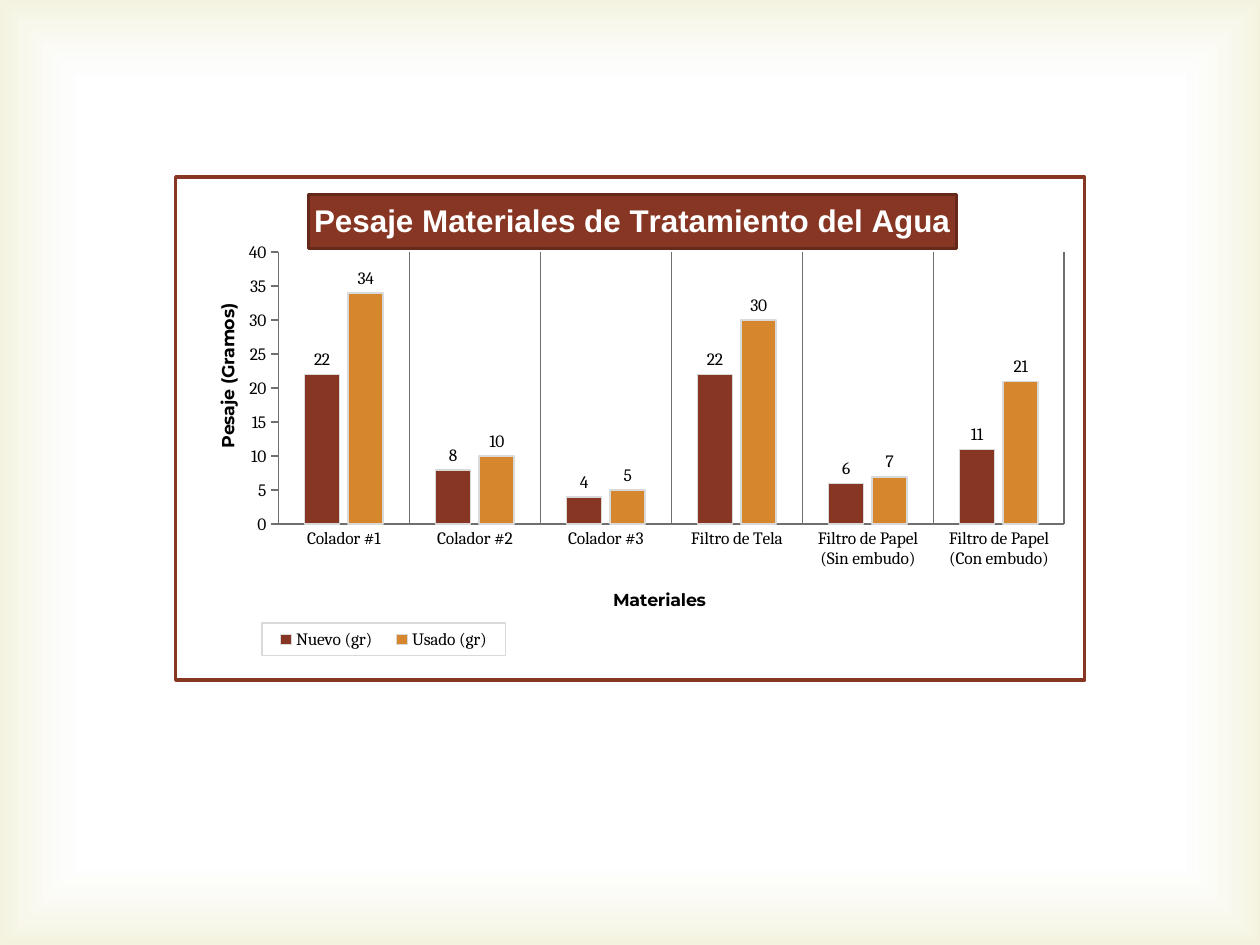
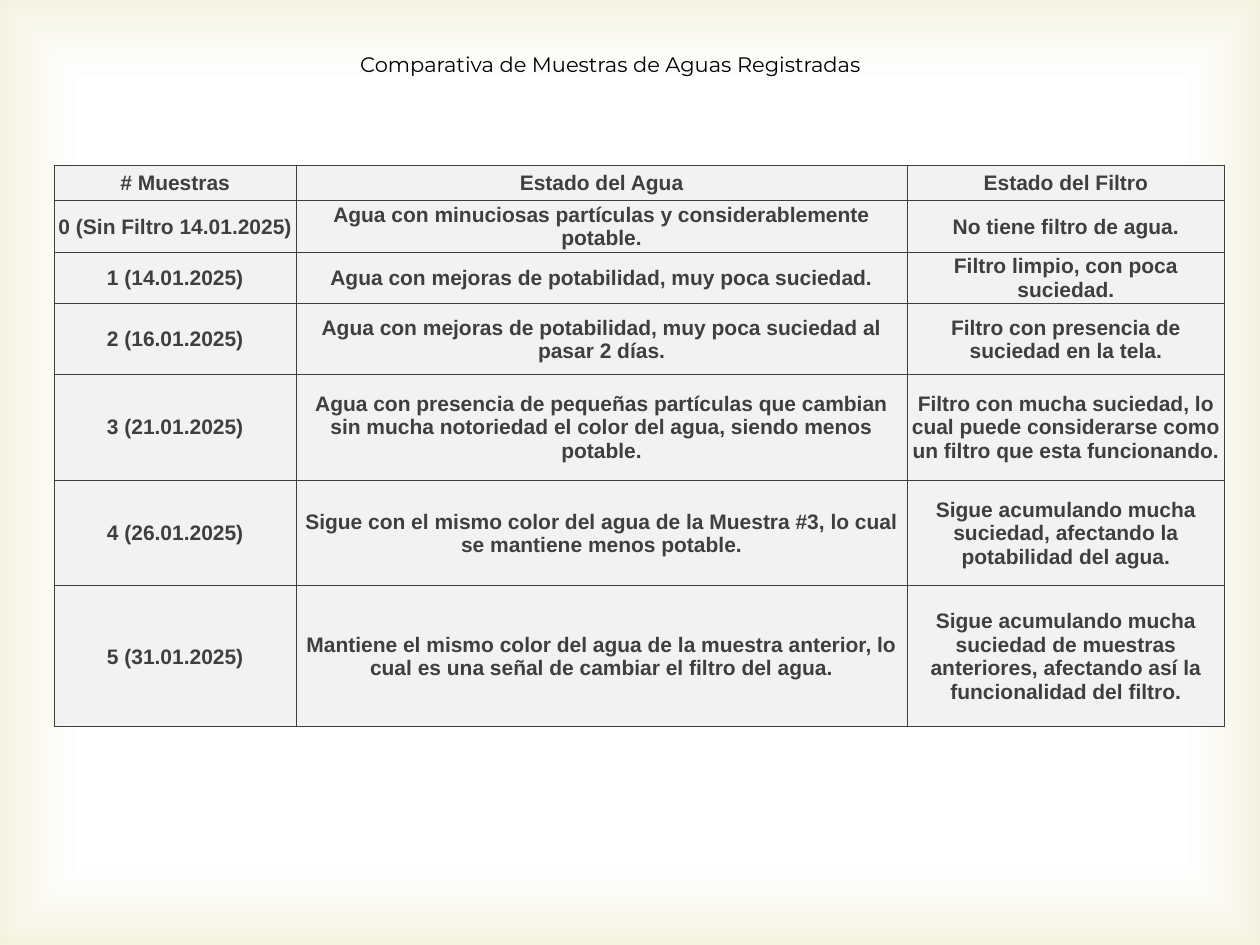
from lxml import etree
from pptx import Presentation
from pptx.chart import data as cd
from pptx.dml.color import RGBColor
from pptx.enum import chart as ch, shapes, text
from pptx.oxml import parse_xml
from pptx.oxml.ns import nsdecls, qn
from pptx.util import Pt

# Content
CHART_TITLE = "Pesaje Materiales de Tratamiento del Agua"
CATEGORY_TITLE = "Materiales"
VALUE_TITLE = "Pesaje (Gramos)"
MATERIALS = ["Colador #1", "Colador #2", "Colador #3", "Filtro de Tela",
             "Filtro de Papel (Sin embudo)", "Filtro de Papel (Con embudo)"]
WEIGHTS = {"Nuevo (gr)": (22, 8, 4, 22, 6, 11),
           "Usado (gr)": (34, 10, 5, 30, 7, 21)}

TABLE_TITLE = "Comparativa de Muestras de Aguas Registradas"
SAMPLES = [
    ("# Muestras", "Estado del Agua", "Estado del Filtro"),
    ("0 (Sin Filtro 14.01.2025)",
     "Agua con minuciosas partículas y considerablemente potable.",
     "No tiene filtro de agua."),
    ("1 (14.01.2025)",
     "Agua con mejoras de potabilidad, muy poca suciedad.",
     "Filtro limpio, con poca suciedad."),
    ("2 (16.01.2025)",
     "Agua con mejoras de potabilidad, muy poca suciedad al pasar 2 días.",
     "Filtro con presencia de suciedad en la tela."),
    ("3 (21.01.2025)",
     "Agua con presencia de pequeñas partículas que cambian sin mucha "
     "notoriedad el color del agua, siendo menos potable.",
     "Filtro con mucha suciedad, lo cual puede considerarse como un filtro "
     "que esta funcionando."),
    ("4 (26.01.2025)",
     "Sigue con el mismo color del agua de la Muestra #3, lo cual se "
     "mantiene menos potable.",
     "Sigue acumulando mucha suciedad, afectando la potabilidad del agua."),
    ("5 (31.01.2025)",
     "Mantiene el mismo color del agua de la muestra anterior, lo cual es "
     "una señal de cambiar el filtro del agua.",
     "Sigue acumulando mucha suciedad de muestras anteriores, afectando así "
     "la funcionalidad del filtro."),
]
COLUMN_WIDTHS = (138.2, 349.2, 181.4)
ROW_LINES = (1, 1, 1, 2, 3, 3, 4)
LINE_HEIGHT = 20.16

# Style
WHITE = RGBColor(0xFF, 0xFF, 0xFF)
BLACK = RGBColor(0, 0, 0)
KHAKI = RGBColor(0xD1, 0xCA, 0x75)
BRICK = RGBColor(0x87, 0x36, 0x24)
DARK_BRICK = RGBColor(0x65, 0x28, 0x1B)
ORANGE = RGBColor(0xD6, 0x86, 0x2D)
AXIS_GRAY = RGBColor(0x6F, 0x6F, 0x6F)
PALE_GRAY = RGBColor(0xD9, 0xD9, 0xD9)
CELL_GRAY = RGBColor(0xF2, 0xF2, 0xF2)
INK = RGBColor(0x3F, 0x3F, 0x3F)
HEADING_FONT, CELL_FONT, CHART_FONT = "Montserrat", "Arial", "Cambria"


def set_font(font, name, size, color, bold=False):
    font.name, font.size, font.bold = name, Pt(size), bold
    font.color.rgb = color


def set_line(line, color, width):
    line.color.rgb = color
    line.width = Pt(width)


def line_xml(tag, color, width):
    return (f'<a:{tag} {nsdecls("a")} w="{Pt(width)}"><a:solidFill>'
            f'<a:srgbClr val="{color}"/></a:solidFill></a:{tag}>')


def shape_props(fill, line):
    return parse_xml(
        f'<c:spPr {nsdecls("c", "a")}><a:solidFill><a:srgbClr val="{fill}"/>'
        f'</a:solidFill>{line}</c:spPr>')


def add_master_glow(prs, s):
    """Soft coloured edge, kept on the master so every slide shows it."""
    sp = s.shapes.add_shape(shapes.MSO_SHAPE.RECTANGLE, 0, 0,
                            prs.slide_width, prs.slide_height)
    sp.shadow.inherit = False
    sp.fill.background()
    sp.line.fill.background()
    stops = "".join(
        f'<a:gs pos="{pos}000"><a:srgbClr val="{color}">'
        f'<a:alpha val="{alpha}000"/></a:srgbClr></a:gs>'
        for pos, color, alpha in ((83, WHITE, 11), (100, KHAKI, 23)))
    gradient = parse_xml(
        f'<a:gradFill {nsdecls("a")}><a:gsLst>{stops}</a:gsLst>'
        '<a:path path="rect"><a:fillToRect l="50000" t="50000" r="50000" '
        'b="50000"/></a:path></a:gradFill>')
    props = sp.element.spPr
    props.replace(props.find(qn("a:noFill")), gradient)
    prs.slide_master.shapes.element.insert(2, sp.element)


def place(part, x, y, w=None, h=None, inner=False):
    """Give a chart part a fixed place, as fractions of the chart."""
    layout = part.find(qn("c:layout"))
    if layout is None:
        layout = parse_xml(f'<c:layout {nsdecls("c")}/>')
        part.insert(0, layout)
    manual = etree.SubElement(layout, qn("c:manualLayout"))
    values = [("layoutTarget", "inner")] if inner else []
    values += [("xMode", "edge"), ("yMode", "edge"), ("x", x), ("y", y)]
    values += [("w", w), ("h", h)] if w else []
    for tag, value in values:
        etree.SubElement(manual, qn("c:" + tag)).set("val", str(value))


def set_title(title, words, *font):
    title.text_frame.text = words
    set_font(title.text_frame.paragraphs[0].runs[0].font, *font, bold=True)


def add_weight_chart(s):
    data = cd.CategoryChartData()
    data.categories = MATERIALS
    for name, values in WEIGHTS.items():
        data.add_series(name, values)
    chart = s.shapes.add_chart(
        ch.XL_CHART_TYPE.COLUMN_CLUSTERED, Pt(99.4), Pt(100.1), Pt(521.3),
        Pt(289.4), data).chart
    set_font(chart.font, CHART_FONT, 10, BLACK)

    # Titles
    chart.has_title = True
    set_title(chart.chart_title, CHART_TITLE, CELL_FONT, 18, WHITE)
    box = chart.chart_title.format
    box.fill.solid()
    box.fill.fore_color.rgb = BRICK
    set_line(box.line, DARK_BRICK, 2)
    cat, val = chart.category_axis, chart.value_axis
    for axis, words in ((cat, CATEGORY_TITLE), (val, VALUE_TITLE)):
        set_title(axis.axis_title, words, HEADING_FONT, 10, BLACK)
        set_line(axis.format.line, AXIS_GRAY, 1)

    # Axes
    cat.has_major_gridlines, val.has_major_gridlines = True, False
    set_line(cat.major_gridlines.format.line, AXIS_GRAY, 1)
    cat.major_tick_mark = ch.XL_TICK_MARK.NONE
    val.major_tick_mark = ch.XL_TICK_MARK.OUTSIDE
    val.minimum_scale, val.maximum_scale, val.major_unit = 0, 40, 5

    # Bars and labels
    plot = chart.plots[0]
    plot.gap_width, plot.overlap = 150, -25
    plot.vary_by_categories = False
    plot.has_data_labels = True
    plot.data_labels.show_value = True
    plot.data_labels.position = ch.XL_LABEL_POSITION.OUTSIDE_END
    for series, color in zip(plot.series, (BRICK, ORANGE)):
        series.format.fill.solid()
        series.format.fill.fore_color.rgb = color
        set_line(series.format.line, PALE_GRAY, 1)

    # Legend, frame and places
    chart.has_legend = True
    chart.legend.position = ch.XL_LEGEND_POSITION.BOTTOM
    chart.legend.include_in_layout = False
    root = chart.element
    legend = root.find(".//" + qn("c:legend"))
    legend.find(qn("c:overlay")).addnext(
        shape_props(WHITE, line_xml("ln", PALE_GRAY, 0.75)))
    root.find(qn("c:chart")).addnext(
        shape_props(WHITE, line_xml("ln", BRICK, 2)))
    place(root.find(".//" + qn("c:plotArea")), 0.113, 0.15, 0.865, 0.541, True)
    place(legend, 0.095, 0.887, 0.268, 0.065)
    place(chart.chart_title.element, 0.146, 0.035)
    place(cat.axis_title.element, 0.478, 0.81)
    val_title = val.axis_title.element
    place(val_title, 0.04, 0.247)
    val_title.find(".//" + qn("a:bodyPr")).set("rot", "-5400000")


def format_cell(cell, words):
    cell.text = words
    cell.vertical_anchor = text.MSO_ANCHOR.MIDDLE
    cell.margin_left = cell.margin_right = cell.margin_top = Pt(0.7)
    cell.margin_bottom = 0
    p = cell.text_frame.paragraphs[0]
    p.alignment = text.PP_ALIGN.CENTER
    set_font(p.runs[0].font, CELL_FONT, 12, INK, bold=True)
    props = cell._tc.get_or_add_tcPr()
    for side in ("lnL", "lnR", "lnT", "lnB"):
        props.append(parse_xml(line_xml(side, INK, 0.5)))
    cell.fill.solid()
    cell.fill.fore_color.rgb = CELL_GRAY


def add_sample_table(s):
    table = s.shapes.add_table(
        len(SAMPLES), len(COLUMN_WIDTHS), Pt(31), Pt(94.3),
        Pt(sum(COLUMN_WIDTHS)), Pt(LINE_HEIGHT * sum(ROW_LINES))).table
    table.first_row = table.horz_banding = False
    for column, width in zip(table.columns, COLUMN_WIDTHS):
        column.width = Pt(width)
    for row, lines, sample in zip(table.rows, ROW_LINES, SAMPLES):
        row.height = Pt(LINE_HEIGHT * lines)
        for cell, words in zip(row.cells, sample):
            format_cell(cell, words)


def add_slide_title(s, words):
    sp = s.shapes.title
    sp.left, sp.top, sp.width, sp.height = Pt(139), Pt(26), Pt(419.8), Pt(21.8)
    tf = sp.text_frame
    tf.text = words
    tf.word_wrap = True
    tf.auto_size = text.MSO_AUTO_SIZE.SHAPE_TO_FIT_TEXT
    p = tf.paragraphs[0]
    p.alignment = text.PP_ALIGN.CENTER
    set_font(p.runs[0].font, HEADING_FONT, 12, BLACK)


def main():
    prs = Presentation()
    prs.slide_width, prs.slide_height = Pt(720), Pt(540)
    title_only, blank = prs.slide_layouts[5], prs.slide_layouts[6]

    # Slide 1: weights
    s = prs.slides.add_slide(blank)
    add_master_glow(prs, s)
    add_weight_chart(s)

    # Slide 2: samples
    s = prs.slides.add_slide(title_only)
    add_sample_table(s)
    add_slide_title(s, TABLE_TITLE)

    prs.save("out.pptx")


if __name__ == "__main__":
    main()
